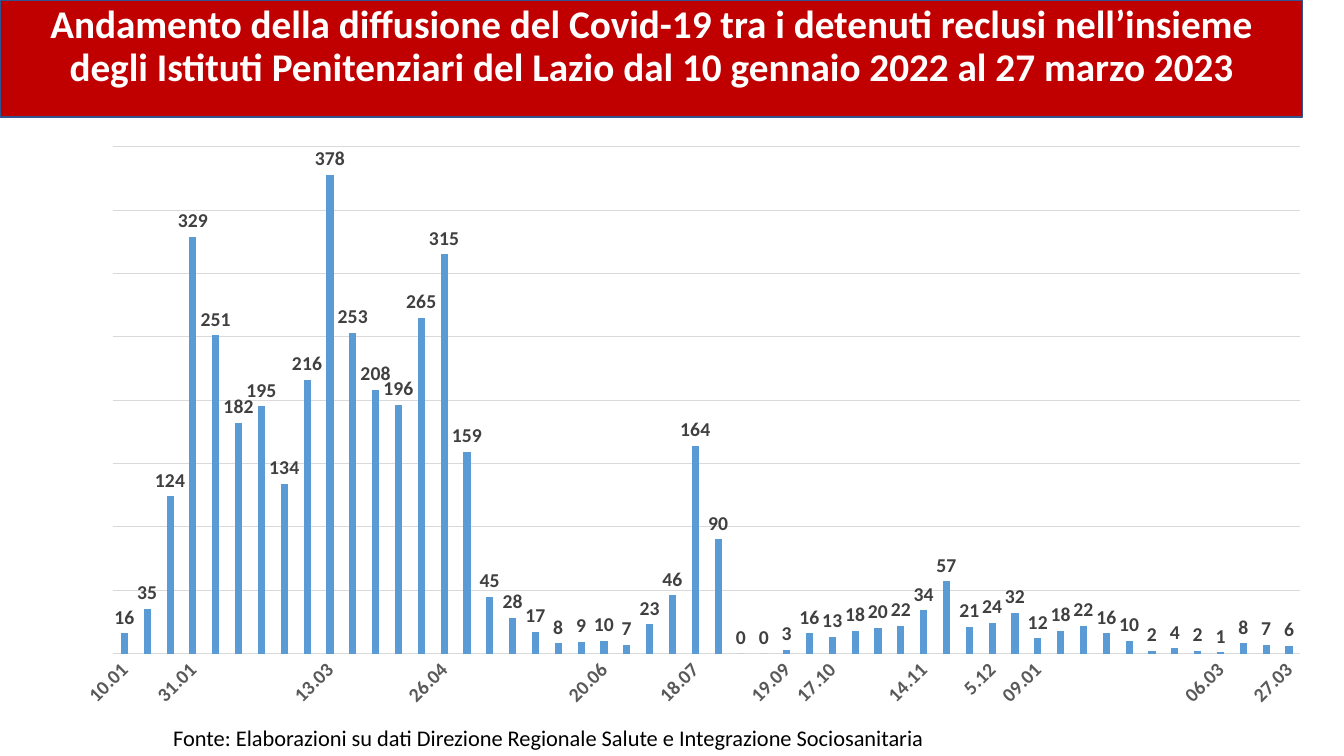
from dataclasses import dataclass

from lxml import etree
from pptx import Presentation, util as u
from pptx.chart.data import CategoryChartData
from pptx.dml.color import RGBColor
from pptx.enum import chart as ch, shapes, text
from pptx.oxml import parse_xml
from pptx.oxml.ns import nsdecls, qn


@dataclass(frozen=True)
class Theme:
    face: str = "Calibri"
    red: str = "C00000"
    edge: str = "325491"
    white: str = "FFFFFF"
    black: str = "000000"
    bar: str = "5B9BD5"
    grid: str = "D9D9D9"
    axis: str = "595959"
    label: str = "404040"
    head: int = 28
    note: int = 16
    tick: int = 14


class Deck:
    def __init__(self, theme):
        self.theme = theme
        self.prs = Presentation()
        self.prs.slide_width = u.Inches(13.33)
        self.prs.slide_height = u.Inches(7.5)
        self.slide = self.prs.slides.add_slide(self.prs.slide_layouts[6])

    def box(self, x, y, w, h):
        wide, high = self.prs.slide_width, self.prs.slide_height
        return [int(n) for n in (x * wide / 100, y * high / 100, w * wide / 100, h * high / 100)]

    def font(self, font, size, color, bold=False):
        font.name = self.theme.face
        font.size = u.Pt(size)
        font.bold = bold
        font.color.rgb = RGBColor.from_string(color)

    def rule(self, line, color, width):
        line.color.rgb = RGBColor.from_string(color)
        line.width = u.Pt(width)

    def banner(self, words, *area):
        t = self.theme
        shape = self.slide.shapes.add_shape(shapes.MSO_SHAPE.RECTANGLE, *self.box(*area))
        shape.shadow.inherit = False
        shape.fill.solid()
        shape.fill.fore_color.rgb = RGBColor.from_string(t.red)
        self.rule(shape.line, t.edge, 1)
        frame = shape.text_frame
        frame.word_wrap = True
        frame.vertical_anchor = text.MSO_ANCHOR.TOP
        para = frame.paragraphs[0]
        para.text = words
        para.alignment = text.PP_ALIGN.CENTER
        para.line_spacing = 0.9
        para.space_before = u.Pt(10)
        self.font(para.font, t.head, t.white, True)

    def note(self, words, *area):
        frame = self.slide.shapes.add_textbox(*self.box(*area)).text_frame
        frame.word_wrap = False
        frame.auto_size = text.MSO_AUTO_SIZE.SHAPE_TO_FIT_TEXT
        para = frame.paragraphs[0]
        para.text = words
        self.font(para.font, self.theme.note, self.theme.black)

    def columns(self, names, vals, inner, *area):
        t = self.theme
        data = CategoryChartData()
        data.categories = names
        data.add_series("Detenuti positivi", vals)
        kind = ch.XL_CHART_TYPE.COLUMN_CLUSTERED
        chart = self.slide.shapes.add_chart(kind, *self.box(*area), data).chart
        chart.has_legend = False
        chart.has_title = False
        self.font(chart.font, t.tick, t.black, True)

        plot = chart.plots[0]
        plot.gap_width = 219
        plot.overlap = -27
        plot.vary_by_categories = False
        fill = plot.series[0].format.fill
        fill.solid()
        fill.fore_color.rgb = RGBColor.from_string(t.bar)
        plot.has_data_labels = True
        labels = plot.data_labels
        labels.show_value = True
        labels.position = ch.XL_LABEL_POSITION.OUTSIDE_END
        self.font(labels.font, t.tick, t.label, True)

        axis = chart.value_axis
        axis.minimum_scale = 0
        axis.maximum_scale = 400
        axis.major_unit = 50
        axis.visible = False
        self.rule(axis.major_gridlines.format.line, t.grid, 0.75)

        axis = chart.category_axis
        axis.major_tick_mark = ch.XL_TICK_MARK.NONE
        self.rule(axis.format.line, t.grid, 0.75)
        self.font(axis.tick_labels.font, t.tick, t.axis, True)
        root = chart.element
        body = root.find(".//" + qn("c:catAx")).find(".//" + qn("a:bodyPr"))
        body.set("rot", str(-45 * 60000))
        skip = parse_xml(f'<c:tickLblSkip {nsdecls("c")} val="1"/>')
        root.find(".//" + qn("c:noMultiLvlLbl")).addprevious(skip)
        self.place(root.find(".//" + qn("c:plotArea")), inner)

    def place(self, area, inner):
        old = area.find(qn("c:layout"))
        if old is not None:
            area.remove(old)
        layout = etree.Element(qn("c:layout"))
        manual = etree.SubElement(layout, qn("c:manualLayout"))
        rows = [("layoutTarget", "inner"), ("xMode", "edge"), ("yMode", "edge")]
        for name, val in rows + list(zip("xywh", inner)):
            etree.SubElement(manual, qn("c:" + name)).set("val", str(val))
        area.insert(0, layout)


def main():
    vals = [
        16, 35, 124, 329, 251, 182, 195, 134, 216, 378, 253, 208, 196,
        265, 315, 159, 45, 28, 17, 8, 9, 10, 7, 23, 46, 164,
        90, 0, 0, 3, 16, 13, 18, 20, 22, 34, 57, 21, 24,
        32, 12, 18, 22, 16, 10, 2, 4, 2, 1, 8, 7, 6,
    ]
    dates = {
        0: "10.01", 3: "31.01", 9: "13.03", 14: "26.04", 21: "20.06",
        25: "18.07", 29: "19.09", 31: "17.10", 35: "14.11", 38: "5.12",
        40: "09.01", 48: "06.03", 51: "27.03",
    }
    names = [dates.get(i, "") for i in range(len(vals))]
    deck = Deck(Theme())
    deck.banner(
        "Andamento della diffusione del Covid-19 tra i detenuti reclusi nell’insieme "
        "degli Istituti Penitenziari del Lazio dal 10 gennaio 2022 al 27 marzo 2023",
        0, 0, 96.92, 15.5,
    )
    deck.note(
        "Fonte: Elaborazioni su dati Direzione Regionale Salute e Integrazione Sociosanitaria",
        12.15, 95.07, 58.8, 4.93,
    )
    deck.columns(names, vals, (0.04, 0.02, 0.94, 0.87), 4.65, 17.87, 94, 77.07)
    deck.prs.save("out.pptx")


if __name__ == "__main__":
    main()
